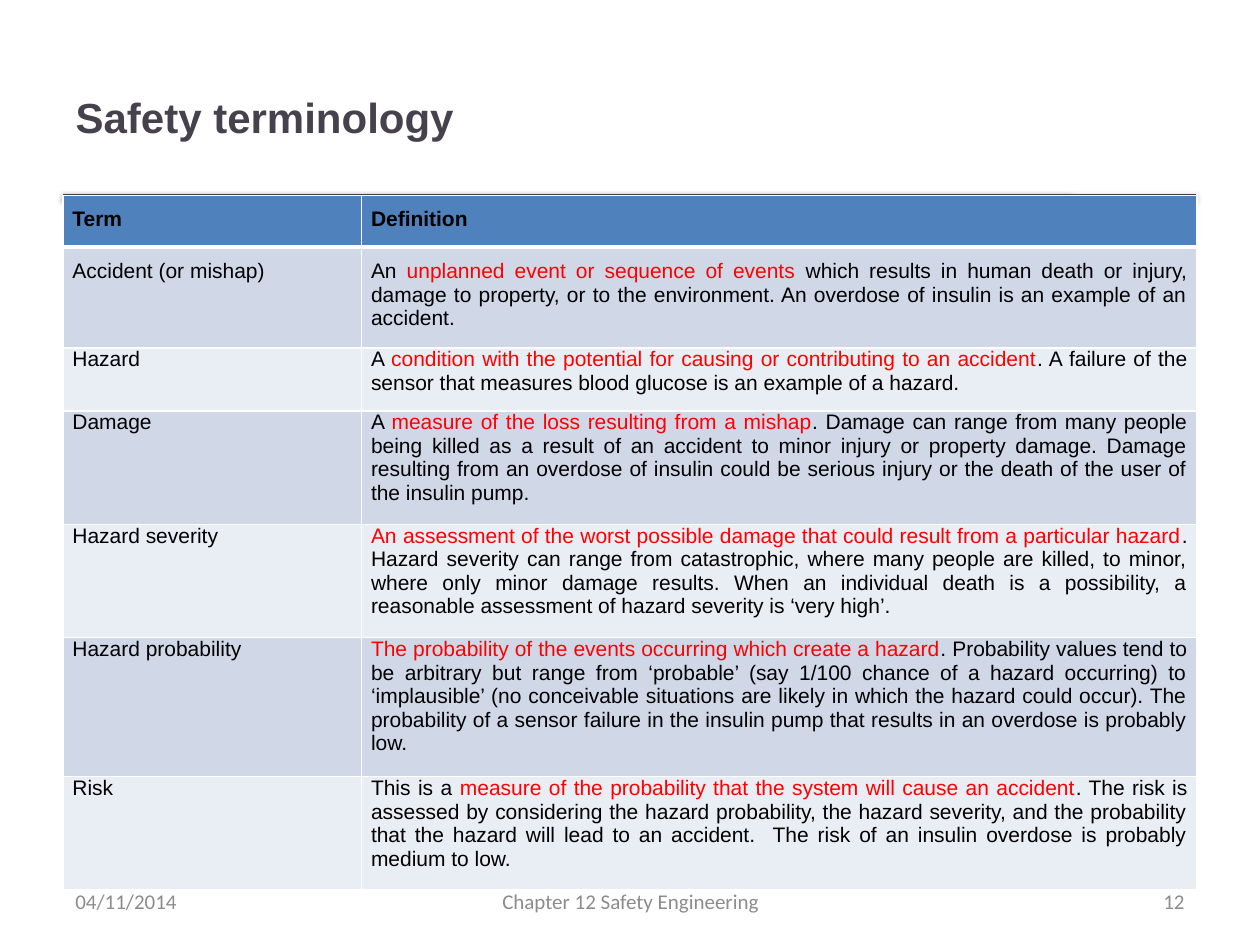
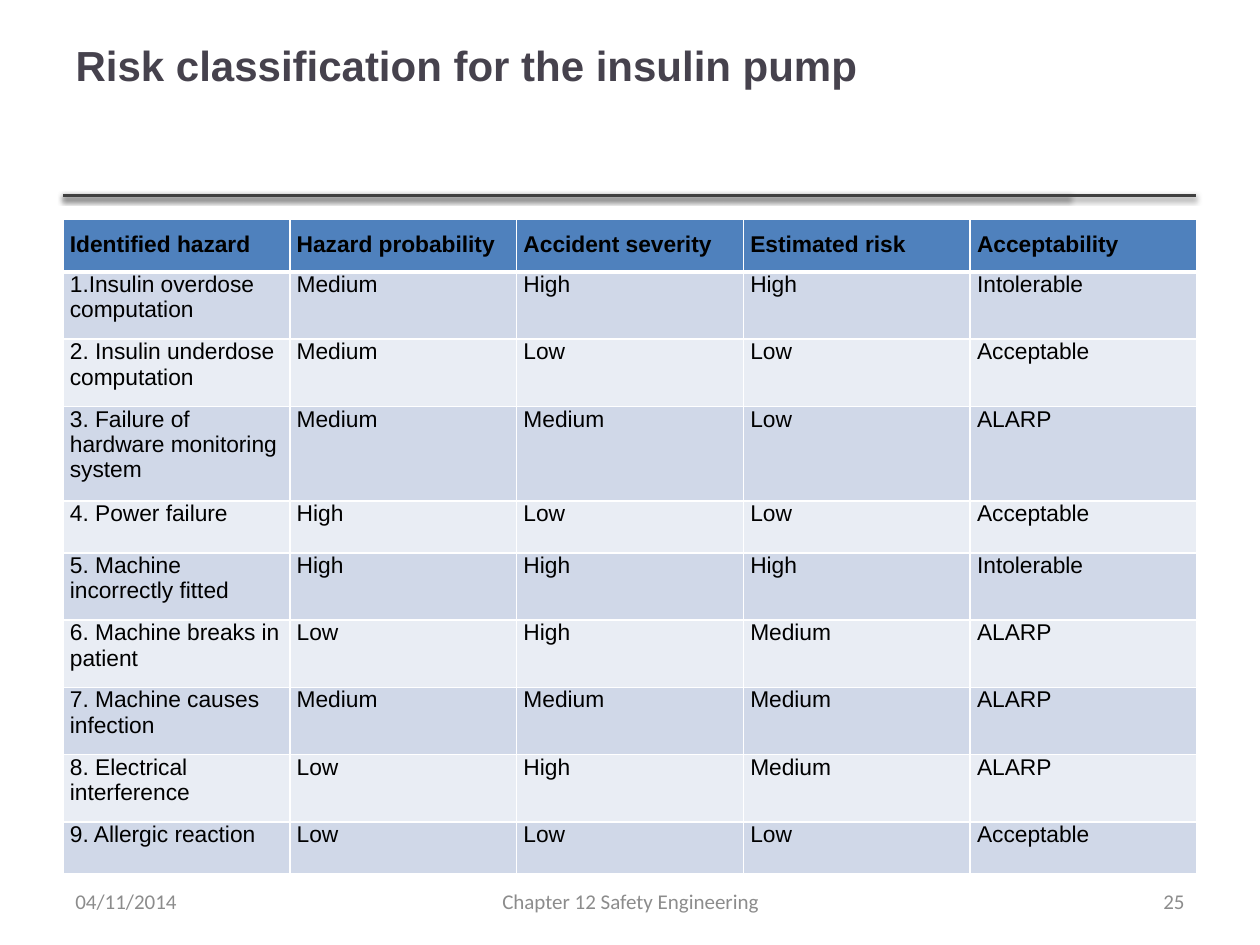
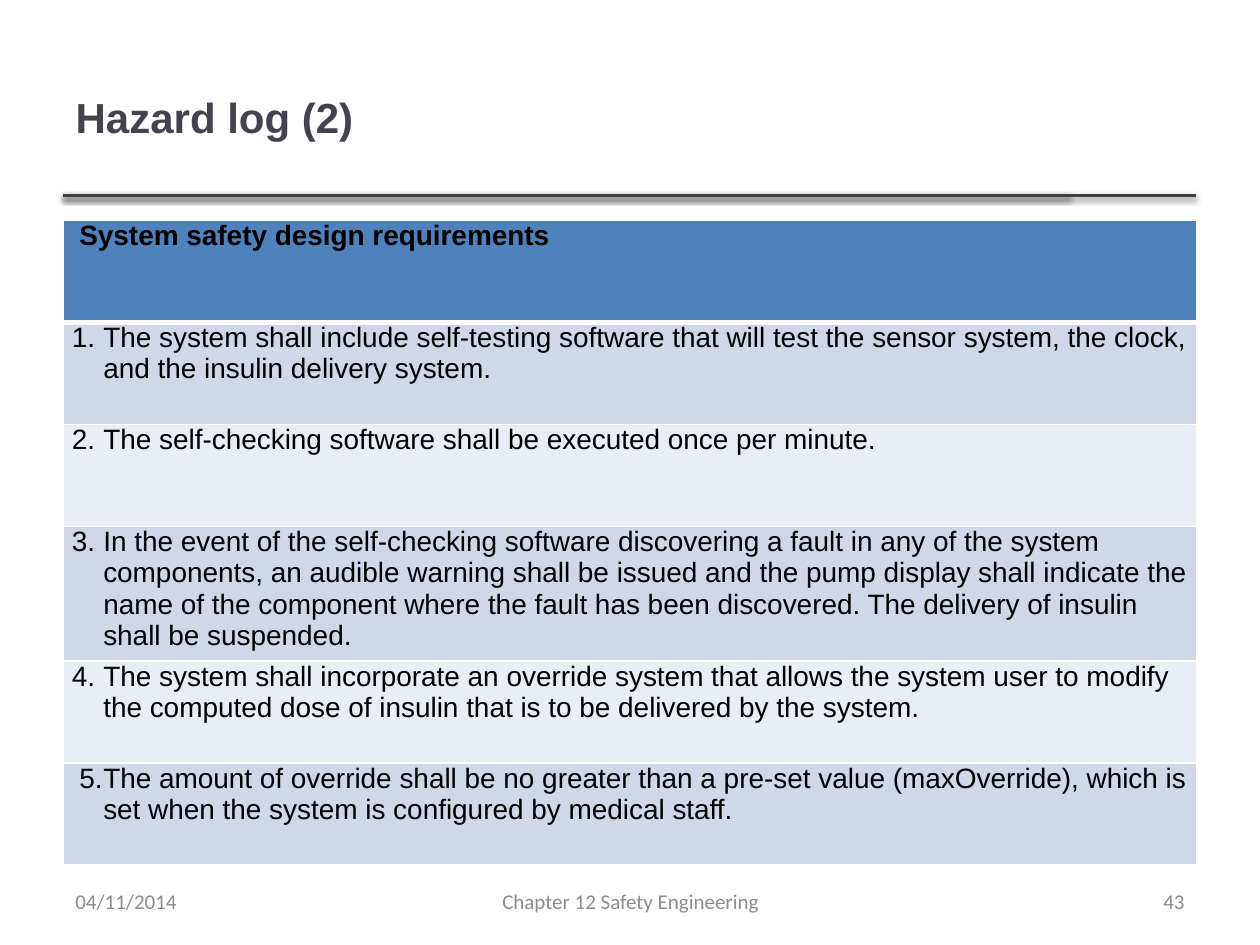
from lxml.etree import SubElement
from pptx import Presentation
from pptx.dml.color import RGBColor
from pptx.enum.shapes import MSO_CONNECTOR
from pptx.enum.text import MSO_ANCHOR, PP_ALIGN
from pptx.oxml.ns import qn
from pptx.util import Inches, Pt


def rgb(value):
    return RGBColor.from_string(value)


class Deck:
    """Shared style, the current slide and one method per kind of element."""

    COLS, ROWS = 20, 15
    LEFT, WIDTH = 1, 18
    RULE_Y = 3.1
    TITLE, RULE, FOOTER = "46424D", "404040", "8C8C8C"
    TEXT, KEY, HEAD, EDGE = "000000", "FF0000", "4F81BD", "FFFFFF"
    BANDS = ("D0D8E8", "E9EDF4")

    def __init__(self):
        self.prs = Presentation()
        self.prs.slide_width, self.prs.slide_height = Inches(10), Inches(7.5)
        self.layout = self.prs.slide_layouts[5]
        self.s = None

    def x(self, cols):
        return round(cols * self.prs.slide_width / self.COLS)

    def y(self, rows):
        return round(rows * self.prs.slide_height / self.ROWS)

    def box(self, left, top, width, height):
        return self.x(left), self.y(top), self.x(width), self.y(height)

    def font(self, r, size, color, name="Arial", bold=False):
        r.font.name, r.font.size, r.font.bold = name, Pt(size), bold
        r.font.color.rgb = rgb(color)

    # Slide frame: title, rule and footers
    def slide(self, title, number, top=0.6, width=15.96):
        first = self.s is None
        self.s = self.prs.slides.add_slide(self.layout)
        if first:
            for end in (16.98, 18.98):
                self.layout_rule(end)
        sp = self.s.shapes.title
        sp.left, sp.top, sp.width, sp.height = self.box(self.LEFT, top, width, 2.5)
        tf = sp.text_frame
        tf.text = title
        tf.vertical_anchor = MSO_ANCHOR.MIDDLE
        p = tf.paragraphs[0]
        p.alignment = PP_ALIGN.LEFT
        self.font(p.runs[0], 24, self.TITLE, bold=True)
        self.footer("04/11/2014", 1, 4.66, PP_ALIGN.LEFT)
        self.footer("Chapter 12 Safety Engineering", 6.84, 6.34, PP_ALIGN.CENTER)
        self.footer(str(number), 14.34, 4.66, PP_ALIGN.RIGHT)

    def layout_rule(self, end):
        y = self.y(self.RULE_Y)
        line = self.s.shapes.add_connector(
            MSO_CONNECTOR.STRAIGHT, self.x(self.LEFT), y, self.x(end), y)
        line.line.color.rgb = rgb(self.RULE)
        line.line.width = Pt(2)
        effects = SubElement(line.element.spPr, qn("a:effectLst"))
        shadow = SubElement(effects, qn("a:outerShdw"), blurRad=str(Pt(3.1)),
                            dist=str(Pt(1.6)), dir="5400000", rotWithShape="0")
        color = SubElement(shadow, qn("a:srgbClr"), val="000000")
        SubElement(color, qn("a:alpha"), val="38000")
        self.layout.shapes.element.append(line.element)

    def footer(self, text, left, width, align):
        tf = self.s.shapes.add_textbox(*self.box(left, 13.9, width, 0.8)).text_frame
        tf.word_wrap = True
        tf.vertical_anchor = MSO_ANCHOR.MIDDLE
        tf.text = text
        p = tf.paragraphs[0]
        p.alignment = align
        self.font(p.runs[0], 12, self.FOOTER, "Calibri")

    # Tables: a header row, then banded rows
    def table(self, rows, top, widths, heights, pads, side, size):
        frame = self.s.shapes.add_table(
            len(rows), len(widths),
            *self.box(self.LEFT, top, self.WIDTH, sum(heights)))
        table = frame.table
        table.horz_banding = False
        for column, width in zip(table.columns, widths):
            column.width = self.x(width)
        for i, (row, height, pad) in enumerate(zip(rows, heights, pads)):
            table.rows[i].height = self.y(height)
            for j, content in enumerate(row):
                cell = table.cell(i, j)
                cell.margin_left = cell.margin_right = self.x(side)
                cell.margin_top, cell.margin_bottom = map(self.y, pad)
                self.cell_style(cell, i)
                p = cell.text_frame.paragraphs[0]
                p.alignment = PP_ALIGN.JUSTIFY if j else PP_ALIGN.LEFT
                self.cell_text(p, content, size, bold=i == 0)
        return table

    def cell_style(self, cell, row):
        tcPr = cell._tc.get_or_add_tcPr()
        for edge in ("lnL", "lnR", "lnT", "lnB"):
            width = 3 if row == 0 and edge == "lnB" else 1
            ln = SubElement(tcPr, qn(f"a:{edge}"), w=str(Pt(width)))
            fill = SubElement(ln, qn("a:solidFill"))
            SubElement(fill, qn("a:srgbClr"), val=self.EDGE)
        cell.fill.solid()
        cell.fill.fore_color.rgb = rgb(self.BANDS[(row - 1) % 2] if row else self.HEAD)

    def cell_text(self, p, content, size, bold):
        """A tuple holds plain and key wording in turn."""
        parts = (content,) if isinstance(content, str) else content
        for k, part in enumerate(parts):
            if part:
                r = p.add_run()
                r.text = part
                self.font(r, size, self.KEY if k % 2 else self.TEXT, bold=bold)

    def indent(self, cell, left, first):
        pPr = cell.text_frame.paragraphs[0]._p.get_or_add_pPr()
        pPr.set("marL", str(self.x(left)))
        pPr.set("indent", str(self.x(first)))


TERMS = [
    ("Term", "Definition"),
    ("Accident (or mishap)", (
        "An ", "unplanned event or sequence of events ",
        "which results in human death or injury, damage to property, or to the "
        "environment. An overdose of insulin is an example of an accident.")),
    ("Hazard", (
        "A ", "condition with the potential for causing or contributing to an accident",
        ". A failure of the sensor that measures blood glucose is an example of a "
        "hazard.")),
    ("Damage", (
        "A ", "measure of the loss resulting from a mishap",
        ". Damage can range from many people being killed as a result of an accident "
        "to minor injury or property damage. Damage resulting from an overdose of "
        "insulin could be serious injury or the death of the user of the insulin "
        "pump.")),
    ("Hazard severity", (
        "", "An assessment of the worst possible damage that could result from a "
        "particular hazard",
        ". Hazard severity can range from catastrophic, where many people are killed, "
        "to minor, where only minor damage results. When an individual death is a "
        "possibility, a reasonable assessment of hazard severity is ‘very high’.")),
    ("Hazard probability", (
        "", "The probability of the events occurring which create a hazard",
        ". Probability values tend to be arbitrary but range from ‘probable’ (say "
        "1/100 chance of a hazard occurring) to ‘implausible’ (no conceivable "
        "situations are likely in which the hazard could occur). The probability of a "
        "sensor failure in the insulin pump that results in an overdose is probably "
        "low.")),
    ("Risk", (
        "This is a ", "measure of the probability that the system will cause an accident",
        ". The risk is assessed by considering the hazard probability, the hazard "
        "severity, and the probability that the hazard will lead to an accident.  The "
        "risk of an insulin overdose is probably medium to low.")),
]

RISKS = [
    ("Identified hazard", "Hazard probability", "Accident severity",
     "Estimated risk", "Acceptability"),
    ("1.Insulin overdose computation", "Medium", "High", "High", "Intolerable"),
    ("2. Insulin underdose computation", "Medium", "Low", "Low", "Acceptable"),
    ("3. Failure of hardware monitoring system", "Medium", "Medium", "Low", "ALARP"),
    ("4. Power failure", "High", "Low", "Low", "Acceptable"),
    ("5. Machine incorrectly fitted", "High", "High", "High", "Intolerable"),
    ("6. Machine breaks in patient", "Low", "High", "Medium", "ALARP"),
    ("7. Machine causes infection", "Medium", "Medium", "Medium", "ALARP"),
    ("8. Electrical interference", "Low", "High", "Medium", "ALARP"),
    ("9. Allergic reaction", "Low", "Low", "Low", "Acceptable"),
]

REQUIREMENTS = [
    "The system shall include self-testing software that will test the sensor system, "
    "the clock, and the insulin delivery system.",
    "The self-checking software shall be executed once per minute.",
    "In the event of the self-checking software discovering a fault in any of the "
    "system components, an audible warning shall be issued and the pump display shall "
    "indicate the name of the component where the fault has been discovered. The "
    "delivery of insulin shall be suspended.",
    "The system shall incorporate an override system that allows the system user to "
    "modify the computed dose of insulin that is to be delivered by the system.",
    "The amount of override shall be no greater than a pre-set value (maxOverride), "
    "which is set when the system is configured by medical staff.",
]


def main():
    deck = Deck()

    # Safety terminology
    deck.slide("Safety terminology", 12)
    deck.table(TERMS, top=3.1, widths=[4.74, 13.26],
               heights=[0.82, 1.5, 0.96, 1.68, 1.7, 2.06, 1.68],
               pads=[(0.2, 0), (0.2, 0.2)] + [(0, 0.2)] * 5, side=0.15, size=12)

    # Risk classification
    deck.slide("Risk classification for the insulin pump", 25, top=-0.22, width=18)
    deck.table(RISKS, top=3.48, widths=[3.6] * 5,
               heights=[0.82, 1, 1, 1.4, 0.82, 1, 1, 1, 1, 0.82],
               pads=[(0.2, 0.2)] + [(0, 0.2)] * 9, side=0.11, size=13)

    # Hazard log
    deck.slide("Hazard log (2)", 43)
    rows = [("System safety design requirements",)]
    rows += [(f"{n}.\t{text}",) for n, text in enumerate(REQUIREMENTS, 1)]
    table = deck.table(rows, top=3.5, widths=[18],
                       heights=[1.62, 1.62, 1.62, 1.96, 1.62, 1.62],
                       pads=[(0, 0)] * 6, side=0.14, size=16)
    deck.indent(table.cell(0, 0), 0.12, 0)
    for i in range(1, len(rows)):
        deck.indent(table.cell(i, 0), 0.5, -0.5 if i < 5 else -0.38)

    deck.prs.save("out.pptx")


if __name__ == "__main__":
    main()
